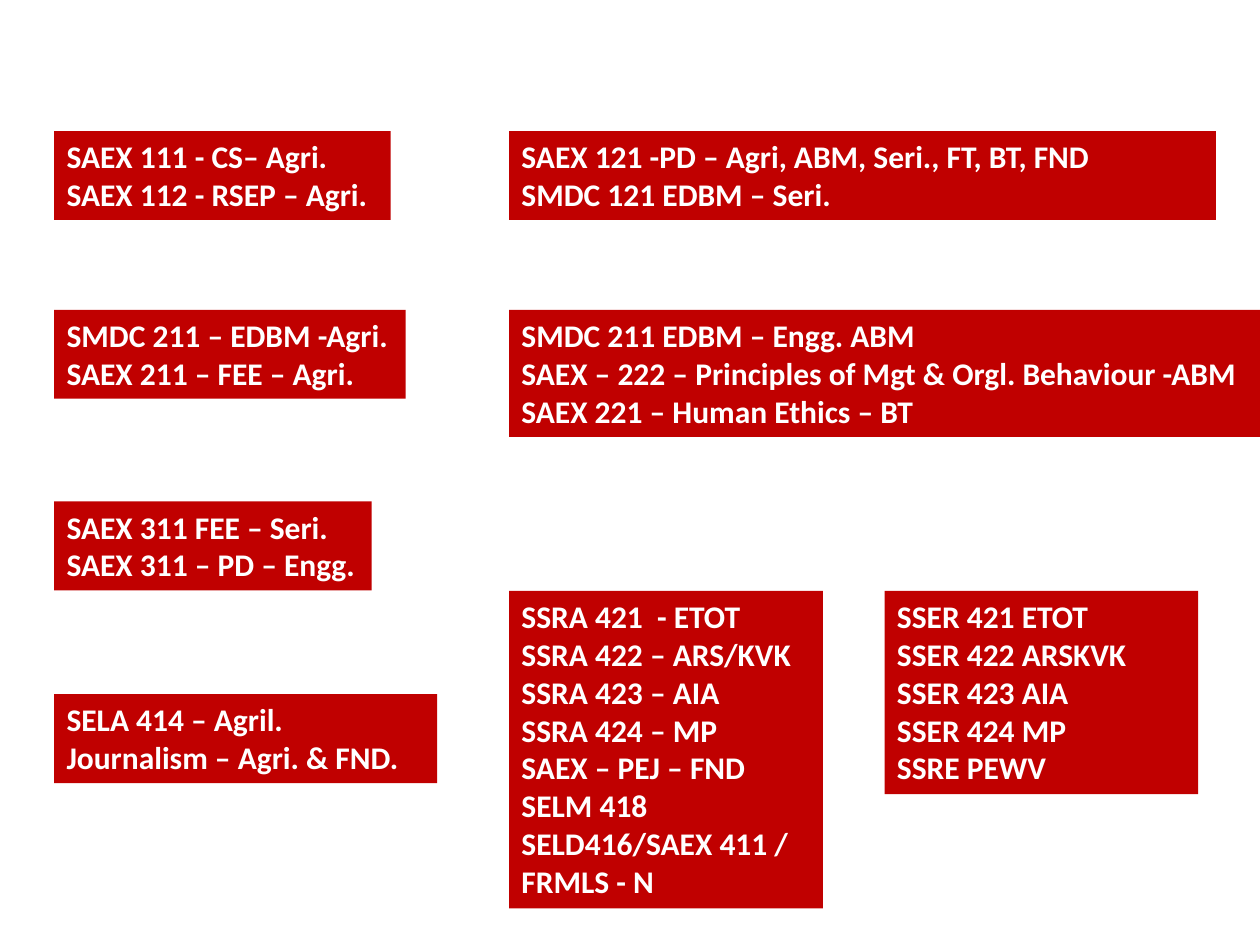
from pptx import Presentation
from pptx.dml.color import RGBColor
from pptx.enum.text import MSO_AUTO_SIZE
from pptx.util import Inches, Pt


def colour(hex_code):
    return RGBColor.from_string(hex_code)


class CoursePage:
    FONT = "Calibri"
    TEXT_SIZE = 18
    TEXT_COLOUR = "FFFFFF"
    BOX_COLOUR = "C00000"
    LINE_HEIGHT = 0.3025
    PADDING = 0.1  # top and bottom margins together

    def __init__(self, deck):
        self.page = deck.slides.add_slide(deck.slide_layouts[6])

    def course_box(self, left, top, width, courses, wrap=True, line_count=None):
        """Add a filled text box, one paragraph a course, sized to its lines."""
        height = self.PADDING + self.LINE_HEIGHT * (line_count or len(courses))
        box = self.page.shapes.add_textbox(
            Inches(left), Inches(top), Inches(width), Inches(height))
        box.fill.solid()
        box.fill.fore_color.rgb = colour(self.BOX_COLOUR)
        frame = box.text_frame
        frame.word_wrap = wrap
        frame.auto_size = MSO_AUTO_SIZE.SHAPE_TO_FIT_TEXT
        frame.text = "\n".join(courses)
        for para in frame.paragraphs:
            para.font.name = self.FONT
            para.font.size = Pt(self.TEXT_SIZE)
            para.font.bold = True
            para.font.color.rgb = colour(self.TEXT_COLOUR)


def main():
    deck = Presentation()
    deck.slide_width, deck.slide_height = Inches(10), Inches(7.5)
    courses = CoursePage(deck)

    # Columns and the tops of the year rows
    odd_term, even_term, electives = 0.43, 4.04, 7.02
    first_year, second_year, third_year, fourth_year = 1.04, 2.46, 3.98, 5.51
    final_term = 4.69

    # Odd semesters
    courses.course_box(odd_term, first_year, 2.67, [
        "SAEX 111 - CS– Agri.", "SAEX 112 - RSEP – Agri."], wrap=False)
    courses.course_box(odd_term, second_year, 2.79, [
        "SMDC 211 – EDBM -Agri.", "SAEX 211 – FEE – Agri."], wrap=False)
    courses.course_box(odd_term, third_year, 2.52, [
        "SAEX 311 FEE – Seri.", "SAEX 311 – PD – Engg."], wrap=False)
    courses.course_box(odd_term, fourth_year, 3.04, [
        "SELA 414 – Agril. Journalism – Agri. & FND."], line_count=2)

    # Even semesters
    courses.course_box(even_term, first_year, 5.61, [
        "SAEX 121 -PD – Agri, ABM, Seri., FT, BT, FND",
        "SMDC 121 EDBM – Seri."])
    courses.course_box(even_term, second_year, 5.96, [
        "SMDC 211 EDBM – Engg. ABM",
        "SAEX – 222 – Principles of Mgt & Orgl. Behaviour -ABM",
        "SAEX 221 – Human Ethics – BT"])

    # Final semester and its electives
    courses.course_box(even_term, final_term, 2.49, [
        "SSRA 421  - ETOT", "SSRA 422 – ARS/KVK", "SSRA 423 – AIA",
        "SSRA 424 – MP", "SAEX – PEJ – FND", "SELM 418",
        "SELD416/SAEX 411 / FRMLS - N"], line_count=8)
    courses.course_box(electives, final_term, 2.49, [
        "SSER 421 ETOT", "SSER 422 ARSKVK", "SSER 423 AIA",
        "SSER 424 MP", "SSRE PEWV"])

    deck.save("out.pptx")


if __name__ == "__main__":
    main()
